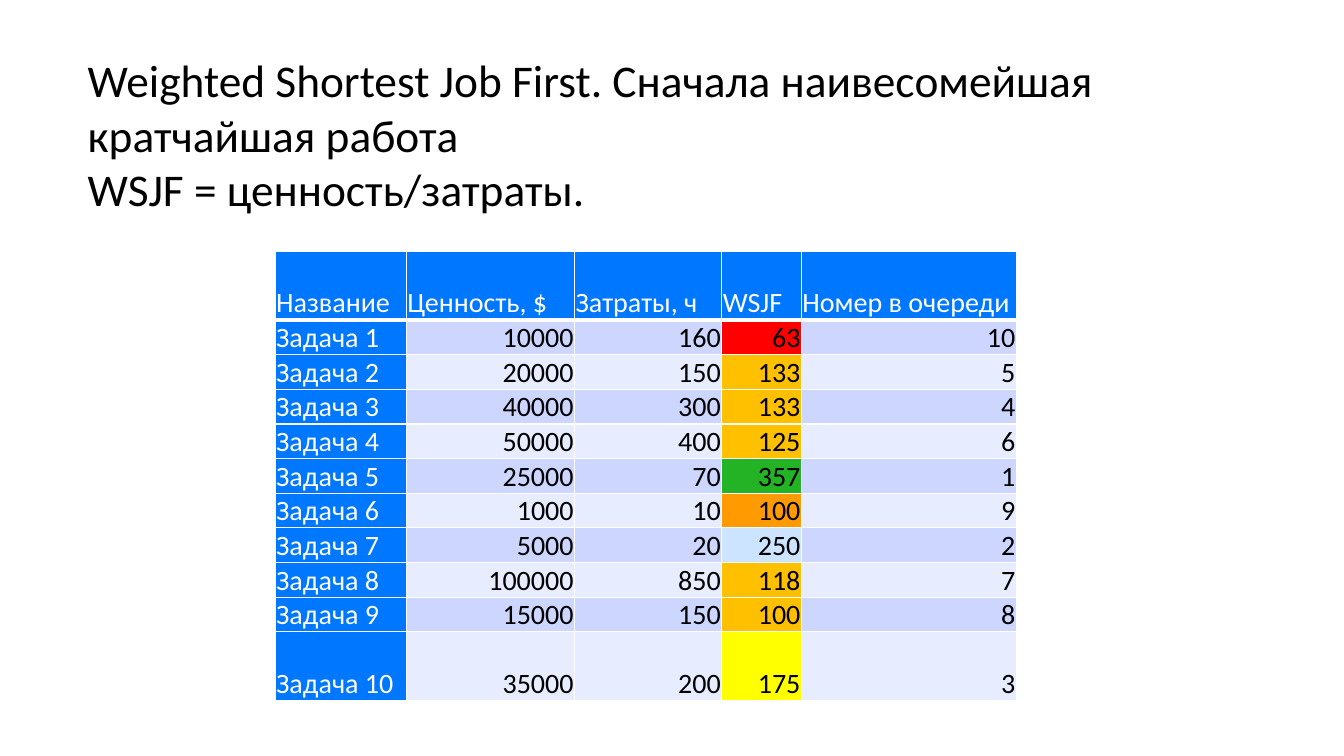
from lxml import etree
from pptx import Presentation
from pptx import util as u
from pptx.dml.color import RGBColor
from pptx.enum import text
from pptx.oxml.ns import qn

HUES = {
    "ink": "000000", "white": "FFFFFF", "blue": "0077FF",
    "odd": "CCD6FF", "even": "E7ECFF",
    "red": "FF0000", "amber": "FFC000", "green": "23B324",
    "orange": "FF9A00", "sky": "CCE4FF", "yellow": "FFFF00",
}
TITLE = ("Weighted Shortest Job First. Сначала наивесомейшая кратчайшая работа"
         "\vWSJF = ценность/затраты.")
HEADS = ["Название", "Ценность, $", "Затраты, ч", "WSJF", "Номер в очереди"]
TASKS = [
    (10000, 160, 63, 10, "red"),
    (20000, 150, 133, 5, "amber"),
    (40000, 300, 133, 4, "amber"),
    (50000, 400, 125, 6, "amber"),
    (25000, 70, 357, 1, "green"),
    (1000, 10, 100, 9, "orange"),
    (5000, 20, 250, 2, "sky"),
    (100000, 850, 118, 7, "amber"),
    (15000, 150, 100, 8, "amber"),
    (35000, 200, 175, 3, "yellow"),
]
WIDTHS = [1.3, 1.67, 1.46, 0.79, 2.13]
SCORE = 3
PAD = u.Inches(0.01)


def tint(hue):
    return RGBColor.from_string(HUES[hue])


def apply(part, form):
    for key, val in form.items():
        setattr(part, key, val)


def write(frame, words, size, hue, align=text.PP_ALIGN.LEFT):
    frame.text = words
    para = frame.paragraphs[0]
    para.alignment = align
    for run in para.runs:
        apply(run.font, {"name": "Calibri", "size": u.Pt(size)})
        run.font.color.rgb = tint(hue)


def edge(cell, side, width):
    props = cell._tc.get_or_add_tcPr()
    line = etree.SubElement(props, qn("a:ln" + side), w=str(u.Pt(width)))
    fill = etree.SubElement(line, qn("a:solidFill"))
    etree.SubElement(fill, qn("a:srgbClr"), val=HUES["white"])


def add_title(slide, left, top, width, height):
    box = slide.shapes.add_textbox(*map(u.Inches, (left, top, width, height)))
    apply(box.text_frame, {
        "word_wrap": True, "vertical_anchor": text.MSO_ANCHOR.TOP,
        "margin_left": 0, "margin_top": u.Inches(0.22),
        "margin_right": 0, "margin_bottom": 0,
    })
    write(box.text_frame, TITLE, 32.4, "ink")


def add_cell(cell, words, row, col, back):
    apply(cell, {
        "vertical_anchor": text.MSO_ANCHOR.BOTTOM,
        "margin_left": PAD, "margin_top": PAD,
        "margin_right": PAD, "margin_bottom": 0,
    })
    thick = {"T": row == 1, "B": row == 0}
    for side in "LRTB":
        edge(cell, side, 3 if thick.get(side) else 1)
    cell.fill.solid()
    cell.fill.fore_color.rgb = tint(back)
    label = row == 0 or col == 0
    align = text.PP_ALIGN.LEFT if label else text.PP_ALIGN.RIGHT
    write(cell.text_frame, words, 20, "white" if label else "ink", align)


def add_queue(slide, left, top, width, height):
    count = len(TASKS) + 1
    frame = slide.shapes.add_table(
        count, len(HEADS), *map(u.Inches, (left, top, width, height)))
    table = frame.table
    for col, span in zip(table.columns, WIDTHS):
        col.width = u.Inches(span)
    unit = height / (count + 2)
    for num, row in enumerate(table.rows):
        row.height = u.Inches(unit * (2 if num in (0, count - 1) else 1))
    for col, head in enumerate(HEADS):
        add_cell(table.cell(0, col), head, 0, col, "blue")
    for row, (*vals, mark) in enumerate(TASKS, 1):
        band = "odd" if row % 2 else "even"
        for col, val in enumerate([f"Задача {row}", *vals]):
            back = {0: "blue", SCORE: mark}.get(col, band)
            add_cell(table.cell(row, col), str(val), row, col, back)


def main():
    deck = Presentation()
    apply(deck, {"slide_width": u.Inches(13.33),
                 "slide_height": u.Inches(7.5)})
    slide = deck.slides.add_slide(deck.slide_layouts[6])
    add_title(slide, 0.87, 0.3, 11.61, 1.4)
    add_queue(slide, 2.73, 2.49, 7.34, 4.45)
    deck.save("out.pptx")


if __name__ == "__main__":
    main()
